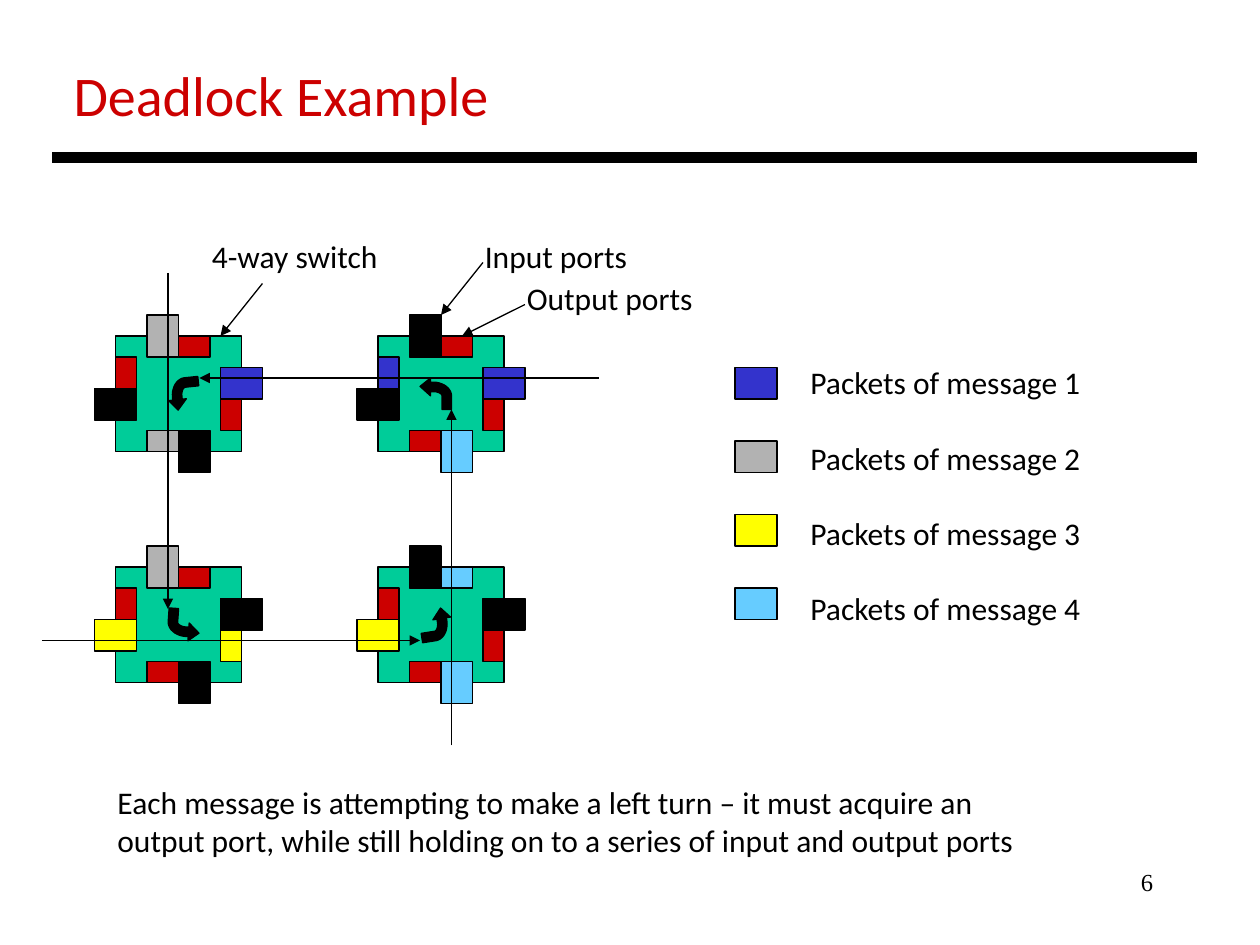
from pptx import Presentation
from pptx import util as u
from pptx.dml import color
from pptx.enum import shapes, text
from pptx.oxml import ns
from lxml import etree

PX = 7620
BLACK, RED, GREEN = "000000", "CC0000", "00CC99"
BLUE, GRAY, YELLOW, SKY = "3333CC", "B2B2B2", "FFFF00", "66CCFF"
PORTS = {
    "bottom": ((30, 90, 30, 20), (60, 90, 30, 40)),
    "left": ((0, 20, 20, 30), (-20, 50, 40, 30)),
    "top": ((60, 0, 30, 20), (30, -20, 30, 40)),
    "right": ((100, 60, 20, 30), (100, 30, 40, 30)),
}
SWITCHES = [
    (70, 100, {"bottom": GRAY}, {"top": GRAY, "right": BLUE}),
    (70, 320, {"right": YELLOW}, {"left": YELLOW, "top": GRAY}),
    (320, 100, {"left": BLUE}, {"bottom": SKY, "right": BLUE}),
    (320, 320, {"top": SKY}, {"bottom": SKY, "left": YELLOW}),
]
ROUTES = [
    (530, 140, 150, 140), (120, 40, 120, 360),
    (0, 390, 360, 390), (390, 490, 390, 170),
]
TURNS = [(360, 360, 81), (360, 140, 0), (120, 360, 184), (120, 140, 264)]
LABELS = [
    ("4-way switch", (150, 0, 184, 48), (210, 50, 170, 100)),
    ("Output ports", (450, 40, 190, 48), (460, 70, 400, 100)),
    ("Input ports", (410, 0, 166, 48), (420, 30, 380, 80)),
]


def px(*vals):
    """Turn px lengths into EMU."""
    return [u.Emu(round(v * PX)) for v in vals]


def rgb(code):
    """Give the colour for a hex string."""
    return color.RGBColor.from_string(code)


def paint(shape, fill):
    """Fill a shape and give it a thin black outline."""
    shape.shadow.inherit = False
    shape.fill.solid()
    shape.fill.fore_color.rgb = rgb(fill)
    shape.line.color.rgb = rgb(BLACK)
    shape.line.width = u.Pt(0.75)


def rect(slide, x, y, w, h, fill):
    """Draw an outlined rectangle."""
    kind = shapes.MSO_SHAPE.RECTANGLE
    paint(slide.shapes.add_shape(kind, *px(x, y, w, h)), fill)


def line(slide, x1, y1, x2, y2, width=0.75, head=True):
    """Draw a black line, with an arrowhead at its end if asked."""
    link = slide.shapes.add_connector(
        shapes.MSO_CONNECTOR.STRAIGHT, *px(x1, y1, x2, y2))
    link.line.color.rgb = rgb(BLACK)
    link.line.width = u.Pt(width)
    if head:
        tail = etree.SubElement(link.line._get_or_add_ln(), ns.qn("a:tailEnd"))
        tail.set("type", "triangle")
    props = link._element.spPr
    etree.SubElement(props, ns.qn("a:effectLst"))


def style(frame, size, fill=BLACK, font="Calibri", align=text.PP_ALIGN.LEFT):
    """Format all the text in a frame."""
    frame.vertical_anchor = text.MSO_ANCHOR.TOP
    for para in frame.paragraphs:
        para.alignment = align
        for run in para.runs:
            run.font.size = u.Pt(size)
            run.font.name = font
            run.font.color.rgb = rgb(fill)


def label(slide, box, words, size=18, **look):
    """Add an unwrapped text box and give back its frame."""
    frame = slide.shapes.add_textbox(*px(*box)).text_frame
    frame.word_wrap = False
    frame.text = words
    style(frame, size, **look)
    return frame


def curve(a, b, c, d, steps=10):
    """List points along a cubic curve."""
    pts = []
    for i in range(steps + 1):
        t = i / steps
        s = 1 - t
        pts.append(tuple(
            s**3 * p + 3 * s * s * t * q + 3 * s * t * t * r + t**3 * e
            for p, q, r, e in zip(a, b, c, d)))
    return pts


def turn(slide, x, y, angle):
    """Draw a bent arrow in a 30 px square, turned by an angle."""
    pts = [(0, 8), (10, 0), (10, 4)]
    pts += curve((13, 4), (22, 4), (30, 10), (30, 17))
    pts += [(30, 30), (21, 30)]
    pts += curve((21, 17), (21, 15), (17, 13), (13, 13))
    pts += [(10, 13), (10, 17)]
    spots = [px(x + a, y + b) for a, b in pts]
    pen = slide.shapes.build_freeform(*spots[0])
    pen.add_line_segments(spots[1:], close=True)
    arrow = pen.convert_to_shape()
    paint(arrow, BLACK)
    arrow.rotation = angle


def switch(slide, x, y, outs, ins):
    """Draw a 4-way switch with its output and input ports."""
    rect(slide, x, y, 120, 110, GREEN)
    for side, boxes in PORTS.items():
        fills = outs.get(side, RED), ins.get(side, BLACK)
        for (dx, dy, w, h), fill in zip(boxes, fills):
            rect(slide, x + dx, y + dy, w, h, fill)


def network(slide, x, y):
    """Draw the four switches, the message routes and the labels."""
    for dx, dy, outs, ins in SWITCHES:
        switch(slide, x + dx, y + dy, outs, ins)
    for x1, y1, x2, y2 in ROUTES:
        line(slide, x + x1, y + y1, x + x2, y + y2)
    for dx, dy, angle in TURNS:
        turn(slide, x + dx, y + dy, angle)
    for words, (dx, dy, w, h), (x1, y1, x2, y2) in LABELS:
        label(slide, (x + dx, y + dy, w, h), words)
        line(slide, x + x1, y + y1, x + x2, y + y2)


def legend(slide, x, y):
    """Draw the colour key of the four messages."""
    for i, fill in enumerate((BLUE, GRAY, YELLOW, SKY)):
        rect(slide, x, y + 70 * i, 40, 30, fill)
    words = "\n".join(f"Packets of message {n}" for n in range(1, 5))
    frame = label(slide, (x + 60, y - 10, 284, 266), words)
    for para in frame.paragraphs[1:]:
        para.space_before = u.Pt(21.5)


def header(slide, x, y):
    """Place the title and the rule below it."""
    title = slide.shapes.title
    title.left, title.top, title.width, title.height = px(x + 8, y, 424, 77)
    frame = title.text_frame
    frame.text = "Deadlock Example"
    frame.word_wrap = False
    style(frame, 32, RED)
    line(slide, x, y + 98, x + 1090, y + 98, 6, False)


def footer(slide, x, y):
    """Place the closing remark and the slide number."""
    label(slide, (x, y, 889, 85),
          "Each message is attempting to make a left turn – it must acquire an\n"
          "output port, while still holding on to a series of input and output ports")
    page = label(slide, (x + 760, y + 80, 250, 60), "6", 14,
                 font="Times New Roman", align=text.PP_ALIGN.RIGHT)
    page.word_wrap = True


def main():
    """Build the slide and save it."""
    deck = Presentation()
    deck.slide_width, deck.slide_height = px(1200, 900)
    slide = deck.slides.add_slide(deck.slide_layouts[5])
    header(slide, 50, 52)
    network(slide, 40, 220)
    legend(slide, 700, 350)
    footer(slide, 100, 740)
    deck.save("out.pptx")


if __name__ == "__main__":
    main()
